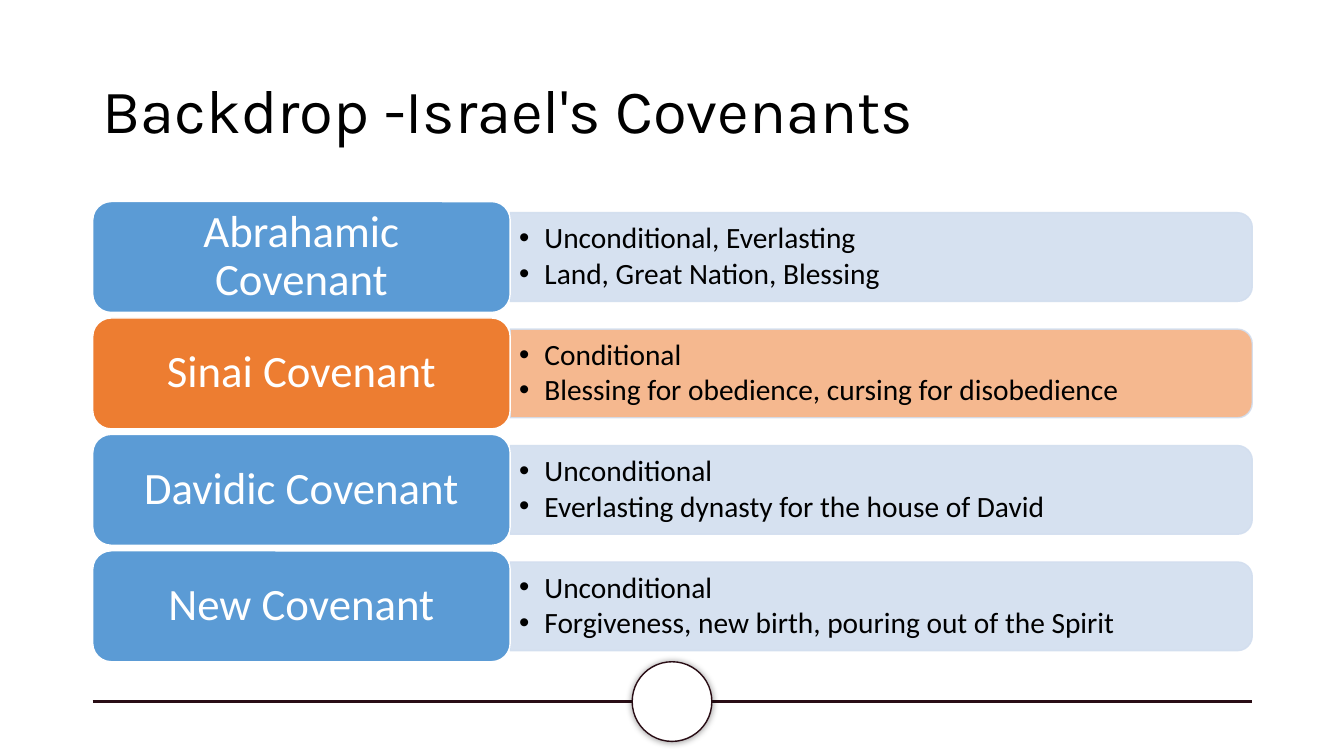
from lxml import etree
from pptx import Presentation
from pptx.dml.color import RGBColor
from pptx.enum.shapes import MSO_CONNECTOR, MSO_SHAPE
from pptx.enum.text import MSO_ANCHOR, PP_ALIGN
from pptx.oxml.ns import qn
from pptx.util import Inches, Pt

STRAIGHT = MSO_CONNECTOR.STRAIGHT
ELLIPSE = MSO_SHAPE.OVAL
ROUNDED = MSO_SHAPE.ROUNDED_RECTANGLE
TAB = MSO_SHAPE.ROUND_2_SAME_RECTANGLE
MIDDLE = MSO_ANCHOR.MIDDLE
LEFT, CENTER = PP_ALIGN.LEFT, PP_ALIGN.CENTER

COLORS = {
    "paper": "FFFFFF", "ink": "000000", "rule": "290D15",
    "blue": "5B9BD5", "pale_blue": "D2DEEF",
    "orange": "ED7D31", "pale_orange": "F4B183",
}

PAGE_WIDTH, PAGE_HEIGHT = 13.33, 7.5
MARGIN, CONTENT_WIDTH = 0.92, 11.5
LABEL_WIDTH = 0.36 * CONTENT_WIDTH
PANEL_WIDTH = CONTENT_WIDTH - LABEL_WIDTH
ROWS_TOP, ROW_HEIGHT = 2.0, 1.1
ROW_PITCH = 1.05 * ROW_HEIGHT
PANEL_HEIGHT = 0.8 * ROW_HEIGHT
RULE_Y, CIRCLE_SIZE = 6.96, 0.79

TITLE = {"name": "Karla", "size": Pt(44), "color": "ink"}
LABEL = {"name": "Calibri", "size": Pt(32), "color": "paper"}
DETAIL = {"name": "Calibri", "size": Pt(21), "color": "ink"}

COVENANTS = [
    ("Abrahamic Covenant", "blue", "pale_blue",
     ["Unconditional, Everlasting", "Land, Great Nation, Blessing"]),
    ("Sinai Covenant", "orange", "pale_orange",
     ["Conditional", "Blessing for obedience, cursing for disobedience"]),
    ("Davidic Covenant", "blue", "pale_blue",
     ["Unconditional", "Everlasting dynasty for the house of David"]),
    ("New Covenant", "blue", "pale_blue",
     ["Unconditional", "Forgiveness, new birth, pouring out of the Spirit"]),
]


def color(name):
    return RGBColor.from_string(COLORS[name])


def inches(*lengths):
    return [Inches(length) for length in lengths]


def set_values(target, values):
    for name, value in values.items():
        if name == "color":
            target.color.rgb = color(value)
        else:
            setattr(target, name, value)


def set_alpha(fill_parent, percent):
    for tint in fill_parent.iter(qn("a:srgbClr")):
        etree.SubElement(tint, qn("a:alpha"), val=str(percent * 1000))


def add_bullet(para):
    properties = para._p.get_or_add_pPr()
    properties.set("marL", str(Inches(0.25)))
    properties.set("indent", str(-Inches(0.25)))
    etree.SubElement(properties, qn("a:buFont"), typeface="Arial")
    etree.SubElement(properties, qn("a:buChar"), char="•")


def write(box, lines, font, align=LEFT, inset=(0.1, 0.05), bullets=False):
    frame = box.text_frame
    side, edge = inches(*inset)
    set_values(frame, {
        "word_wrap": True, "vertical_anchor": MIDDLE,
        "margin_left": side, "margin_right": side,
        "margin_top": edge, "margin_bottom": edge,
    })
    for index, line in enumerate(lines):
        para = frame.paragraphs[0] if index == 0 else frame.add_paragraph()
        if bullets:
            add_bullet(para)
        set_values(para, {"alignment": align, "line_spacing": 0.9})
        if bullets:
            para.space_after = Pt(2.7)
        span = para.add_run()
        span.text = line
        set_values(span.font, font)


def add_box(page, kind, place, fill, line):
    box = page.shapes.add_shape(kind, *inches(*place))
    box.shadow.inherit = False
    box.fill.solid()
    box.fill.fore_color.rgb = color(fill)
    set_values(box.line, {"color": line, "width": Pt(1)})
    return box


def add_text(page, place, *content, **options):
    write(page.shapes.add_textbox(*inches(*place)), *content, **options)


def add_rule(page):
    rule = page.shapes.add_connector(
        STRAIGHT, *inches(MARGIN, RULE_Y, MARGIN + CONTENT_WIDTH, RULE_Y))
    set_values(rule.line, {"color": "rule", "width": Pt(2.25)})
    etree.SubElement(rule._element.spPr, qn("a:effectLst"))


def add_circle(page):
    place = ((PAGE_WIDTH - CIRCLE_SIZE) / 2, RULE_Y - CIRCLE_SIZE / 2,
             CIRCLE_SIZE, CIRCLE_SIZE)
    circle = add_box(page, ELLIPSE, place, "paper", "rule")
    effects = circle._element.spPr.find(qn("a:effectLst"))
    shadow = etree.SubElement(effects, qn("a:outerShdw"),
                              blurRad=str(Pt(5)), dist="0", dir="0")
    etree.SubElement(shadow, qn("a:srgbClr"), val=COLORS["ink"])
    set_alpha(shadow, 40)


def add_panel(page, top, fill, details):
    left = MARGIN + LABEL_WIDTH
    middle_x, middle_y = left + PANEL_WIDTH / 2, top + ROW_HEIGHT / 2
    place = (middle_x - PANEL_HEIGHT / 2, middle_y - PANEL_WIDTH / 2,
             PANEL_HEIGHT, PANEL_WIDTH)
    panel = add_box(page, TAB, place, fill, "pale_blue")
    panel.rotation = 90
    set_alpha(panel._element.spPr, 90)
    text_height = 0.9 * PANEL_HEIGHT
    add_text(page, (left, middle_y - text_height / 2, PANEL_WIDTH, text_height),
             details, DETAIL, inset=(0.09, 0.04), bullets=True)


def add_label(page, top, fill, name):
    label = add_box(page, ROUNDED, (MARGIN, top, LABEL_WIDTH, ROW_HEIGHT),
                    fill, "paper")
    write(label, [name], LABEL, align=CENTER, inset=(0.16, 0.12))


def main():
    deck = Presentation()
    deck.slide_width, deck.slide_height = inches(PAGE_WIDTH, PAGE_HEIGHT)
    page = deck.slides.add_slide(deck.slide_layouts[6])
    add_rule(page)
    add_circle(page)
    add_text(page, (MARGIN, 0.4, CONTENT_WIDTH, 1.45),
             ["Backdrop -Israel's Covenants"], TITLE)
    for row, (name, strong, pale, details) in enumerate(COVENANTS):
        top = ROWS_TOP + row * ROW_PITCH
        add_panel(page, top, pale, details)
        add_label(page, top, strong, name)
    deck.save("out.pptx")


if __name__ == "__main__":
    main()
